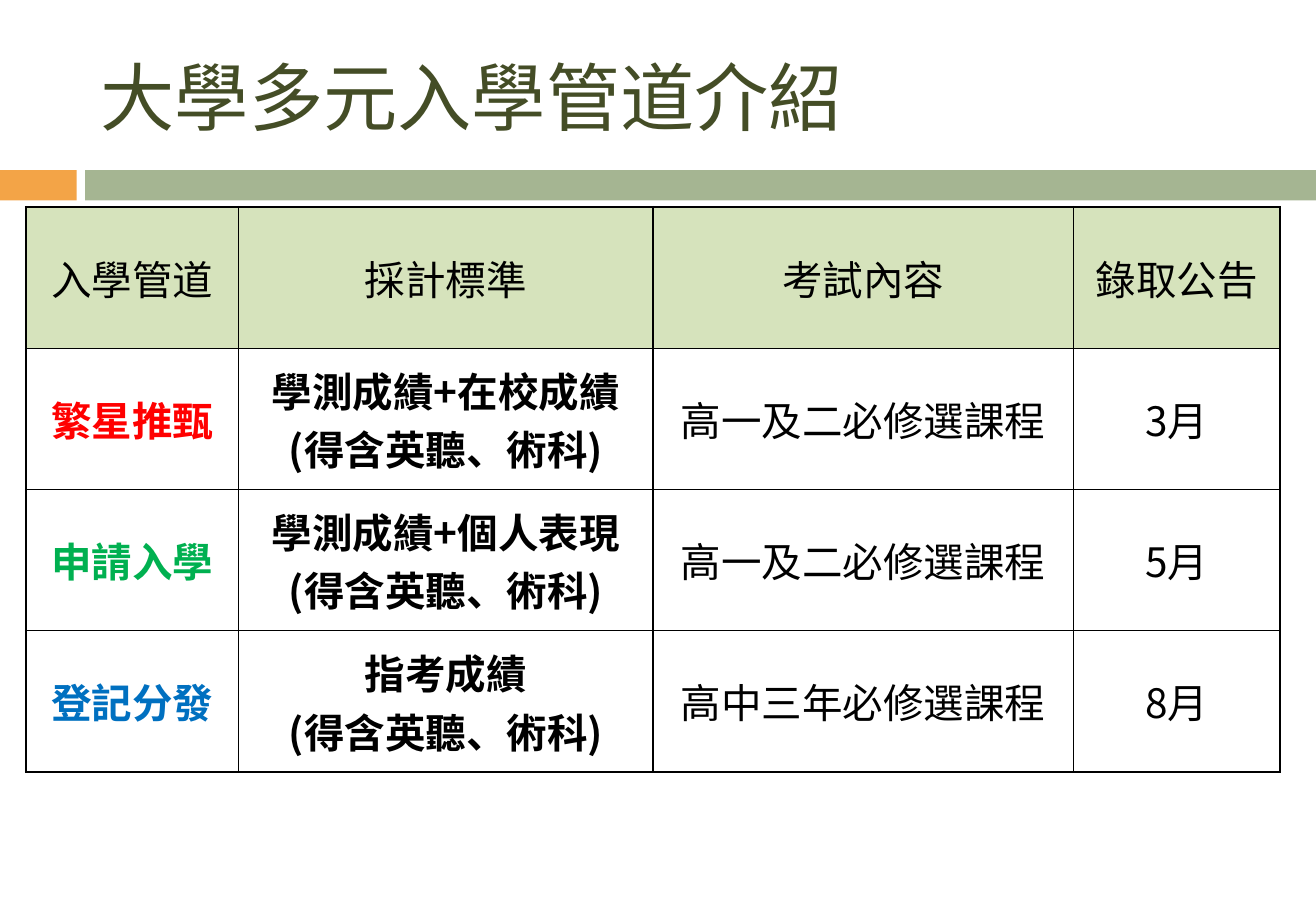
from dataclasses import dataclass

from lxml.etree import SubElement as Sub
from pptx import Presentation
from pptx.dml.color import RGBColor as Rgb
from pptx.enum.shapes import MSO_SHAPE as Kind
from pptx.enum.text import MSO_ANCHOR as Anchor, PP_ALIGN as Align
from pptx.oxml.ns import qn
from pptx.util import Inches, Pt


@dataclass(frozen=True)
class Theme:
    """Colours, font and type sizes."""
    font: str = "Noto Sans CJK SC"
    title: str = "444D26"
    orange: str = "F3A447"
    sage: str = "A5B592"
    head: str = "D6E3BC"
    ink: str = "000000"
    red: str = "FF0000"
    green: str = "00B050"
    blue: str = "0070C0"
    large: int = 44
    body: int = 24
    thin: float = 1
    thick: float = 1.5


class Deck:
    """Draws styled elements, with lengths in percent of the slide."""

    def __init__(self, theme, wide, high):
        self.theme = theme
        self.file = Presentation()
        self.file.slide_width = Inches(wide)
        self.file.slide_height = Inches(high)
        self.slide = self.file.slides.add_slide(self.file.slide_layouts[6])

    def across(self, share):
        return round(self.file.slide_width * share / 100)

    def down(self, share):
        return round(self.file.slide_height * share / 100)

    def box(self, left, top, width, height):
        return (self.across(left), self.down(top),
                self.across(width), self.down(height))

    def label(self, frame, text, size, color, bold=False, align=Align.LEFT):
        frame.text = text
        for para in frame.paragraphs:
            para.alignment = align
            font = para.font
            font.size, font.bold, font.name = Pt(size), bold, self.theme.font
            font.color.rgb = Rgb.from_string(color)
            Sub(para._p.pPr.find(qn("a:defRPr")), qn("a:ea"),
                typeface=self.theme.font)

    def bar(self, color, *place):
        bar = self.slide.shapes.add_shape(Kind.RECTANGLE, *self.box(*place))
        bar.shadow.inherit = False
        bar.fill.solid()
        bar.fill.fore_color.rgb = Rgb.from_string(color)
        bar.line.fill.background()

    def title(self, text, *place):
        frame = self.slide.shapes.add_textbox(*self.box(*place)).text_frame
        frame.word_wrap = True
        frame.vertical_anchor = Anchor.MIDDLE
        self.label(frame, text, self.theme.large, self.theme.title)

    def edge(self, cell, side, width):
        line = Sub(cell._tc.get_or_add_tcPr(), qn(f"a:ln{side}"),
                   w=str(Pt(width)))
        Sub(Sub(line, qn("a:solidFill")), qn("a:srgbClr"), val=self.theme.ink)

    def table(self, left, top, widths, high, rows, tints):
        look = self.theme
        last, end = len(rows) - 1, len(widths) - 1
        place = self.box(left, top, sum(widths), high * len(rows))
        grid = self.slide.shapes.add_table(len(rows), len(widths), *place).table
        grid.first_row = grid.horz_banding = False
        for col, width in zip(grid.columns, widths):
            col.width = self.across(width)
        for y, row in enumerate(rows):
            grid.rows[y].height = self.down(high)
            for x, text in enumerate(row):
                cell = grid.cell(y, x)
                outer = {"L": x == 0, "R": x == end, "T": y == 0, "B": y == last}
                for side, rim in outer.items():
                    self.edge(cell, side, look.thick if rim else look.thin)
                if y == 0:
                    cell.fill.solid()
                    cell.fill.fore_color.rgb = Rgb.from_string(look.head)
                else:
                    cell.fill.background()
                cell.vertical_anchor = Anchor.MIDDLE
                cell.margin_left = cell.margin_right = Inches(0.08)
                cell.margin_top = cell.margin_bottom = 0
                color = tints[y] if x == 0 else look.ink
                self.label(cell.text_frame, text, look.body, color,
                           y > 0 and x < 2, Align.CENTER)


def main():
    """Build the slide on university admission routes."""
    look = Theme()
    deck = Deck(look, 10.83, 7.5)
    deck.bar(look.orange, 0, 18.67, 5.82, 3.33)
    deck.bar(look.sage, 6.46, 18.67, 93.54, 3.33)
    deck.title("大學多元入學管道介紹", 6.74, 3.33, 89.2, 14.4)
    extra = "\n(得含英聽、術科)"
    rows = [
        ("入學管道", "採計標準", "考試內容", "錄取公告"),
        ("繁星推甄", "學測成績+在校成績" + extra, "高一及二必修選課程", "3月"),
        ("申請入學", "學測成績+個人表現" + extra, "高一及二必修選課程", "5月"),
        ("登記分發", "指考成績" + extra, "高中三年必修選課程", "8月"),
    ]
    deck.table(1.97, 22.73, (16.16, 31.49, 31.95, 15.7), 15.5, rows,
               (look.ink, look.red, look.green, look.blue))
    deck.file.save("out.pptx")


if __name__ == "__main__":
    main()
